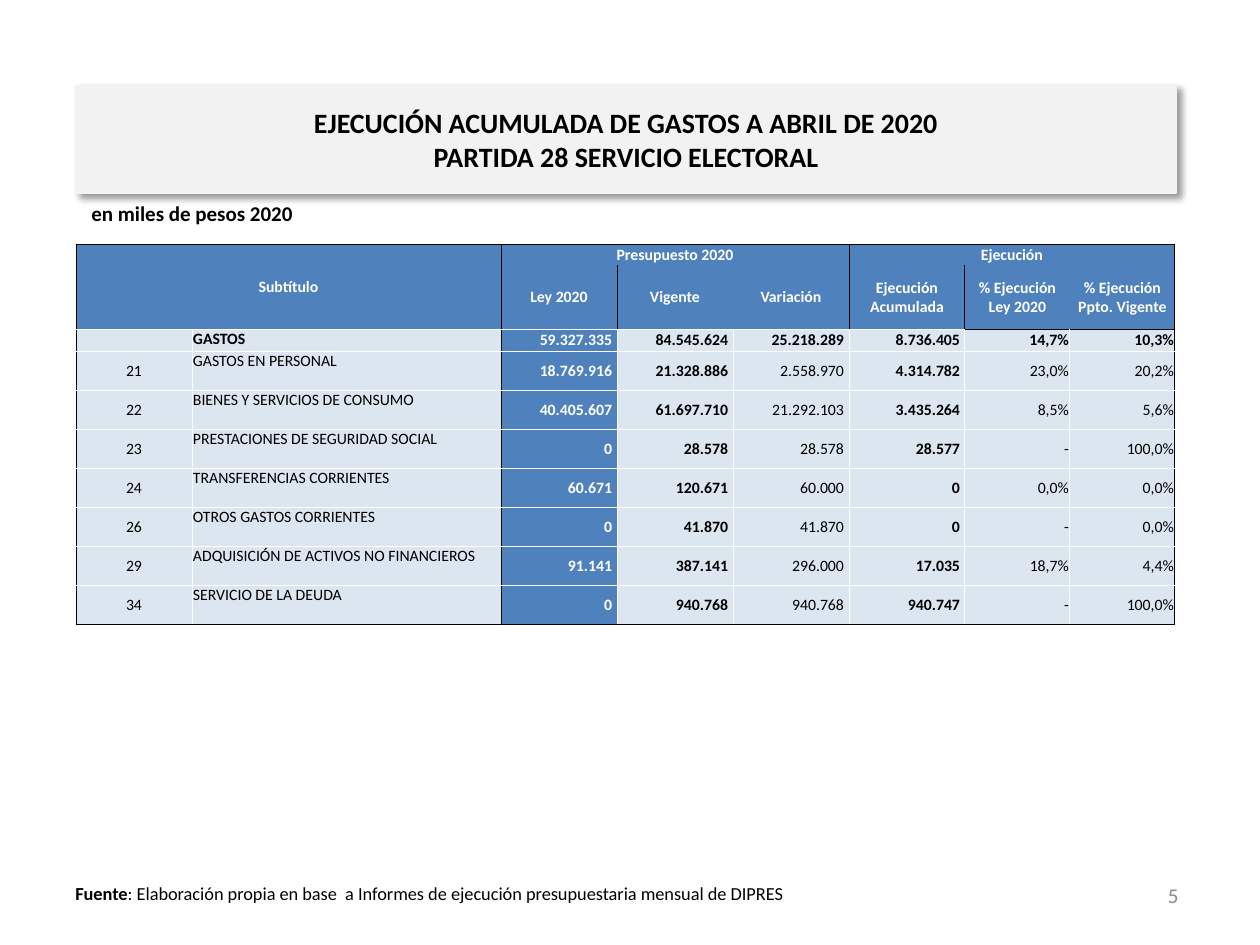
from dataclasses import dataclass

from lxml import etree
from pptx import Presentation
from pptx.dml.color import RGBColor
from pptx.enum.shapes import MSO_SHAPE
from pptx.enum.text import MSO_ANCHOR, PP_ALIGN
from pptx.oxml.ns import qn
from pptx.util import Pt

PX = 914400 / 126  # EMU per px
FONT = "Calibri"
BLACK = RGBColor(0x00, 0x00, 0x00)
WHITE = RGBColor(0xFF, 0xFF, 0xFF)
GRAY = RGBColor(0x8C, 0x8C, 0x8C)
LIGHT_GRAY = RGBColor(0xF2, 0xF2, 0xF2)
BLUE = RGBColor(0x4F, 0x81, 0xBD)
PALE_BLUE = RGBColor(0xDC, 0xE6, 0xF1)
NO_TABLE_STYLE = "{2D5ABB26-0587-4C30-8999-92F81FD0307C}"

COLUMN_WIDTHS = [116, 309, 116, 116, 116, 116, 105, 105]
ROW_HEIGHTS = [21, 64, 22] + [39] * 7
TOTAL_ROW = 2
LAST_ROW, LAST_COLUMN = len(ROW_HEIGHTS) - 1, len(COLUMN_WIDTHS) - 1
CODE, NAME, LAW, CURRENT, EXECUTED, LAW_SHARE = 0, 1, 2, 3, 5, 6

HEADERS = [
    ["Subtítulo", "", "Presupuesto 2020", "", "", "Ejecución", "", ""],
    ["", "", "Ley 2020", "Vigente", "Variación", "Ejecución Acumulada",
     "% Ejecución Ley 2020", "% Ejecución Ppto. Vigente"],
]
MERGES = [((0, 0), (1, 1)), ((0, 2), (0, 4)), ((0, 5), (0, 7))]


@dataclass
class Box:
    left: int
    top: int
    width: int
    height: int

    def emu(self) -> list[int]:
        return [round(n * PX) for n in (self.left, self.top, self.width, self.height)]


@dataclass
class Expense:
    code: str
    name: str
    law: str
    current: str
    variation: str
    executed: str
    law_share: str
    current_share: str

    def texts(self) -> list[str]:
        return [self.code, self.name, self.law, self.current, self.variation,
                self.executed, self.law_share, self.current_share]


EXPENSES = [
    Expense("", "GASTOS", "59.327.335", "84.545.624", "25.218.289", "8.736.405", "14,7%", "10,3%"),
    Expense("21", "GASTOS EN PERSONAL", "18.769.916", "21.328.886", "2.558.970", "4.314.782", "23,0%", "20,2%"),
    Expense("22", "BIENES Y SERVICIOS DE CONSUMO", "40.405.607", "61.697.710", "21.292.103", "3.435.264", "8,5%", "5,6%"),
    Expense("23", "PRESTACIONES DE SEGURIDAD SOCIAL", "0", "28.578", "28.578", "28.577", "-", "100,0%"),
    Expense("24", "TRANSFERENCIAS CORRIENTES", "60.671", "120.671", "60.000", "0", "0,0%", "0,0%"),
    Expense("26", "OTROS GASTOS CORRIENTES", "0", "41.870", "41.870", "0", "-", "0,0%"),
    Expense("29", "ADQUISICIÓN DE ACTIVOS NO FINANCIEROS", "91.141", "387.141", "296.000", "17.035", "18,7%", "4,4%"),
    Expense("34", "SERVICIO DE LA DEUDA", "0", "940.768", "940.768", "940.747", "-", "100,0%"),
]


def format_run(run, size: float, color: RGBColor, bold: bool) -> None:
    run.font.name, run.font.size, run.font.bold = FONT, Pt(size), bold
    run.font.color.rgb = color


def add_text(slide, box: Box, parts: list[tuple[str, bool]], size: float,
             color: RGBColor = BLACK, align=PP_ALIGN.LEFT, anchor=MSO_ANCHOR.TOP) -> None:
    text_frame = slide.shapes.add_textbox(*box.emu()).text_frame
    text_frame.word_wrap = True
    text_frame.vertical_anchor = anchor
    paragraph = text_frame.paragraphs[0]
    paragraph.alignment = align
    for text, bold in parts:
        run = paragraph.add_run()
        run.text = text
        format_run(run, size, color, bold)


def add_title(slide, box: Box, lines: list[str]) -> None:
    shape = slide.shapes.add_shape(MSO_SHAPE.RECTANGLE, *box.emu())
    shape.fill.solid()
    shape.fill.fore_color.rgb = LIGHT_GRAY
    shape.line.color.rgb = LIGHT_GRAY
    shape.line.width = Pt(0.75)
    # Soft shadow to the lower right
    shape.shadow.inherit = False
    effects = shape._element.spPr.find(qn("a:effectLst"))
    shadow = etree.SubElement(effects, qn("a:outerShdw"), blurRad=str(Pt(4)), dist=str(Pt(3)),
                              dir="2700000", algn="tl", rotWithShape="0")
    color = etree.SubElement(shadow, qn("a:srgbClr"), val=str(BLACK))
    etree.SubElement(color, qn("a:alpha"), val="40000")
    shape.text_frame.text = "\n".join(lines)
    shape.text_frame.vertical_anchor = MSO_ANCHOR.MIDDLE
    for paragraph in shape.text_frame.paragraphs:
        paragraph.alignment = PP_ALIGN.CENTER
        format_run(paragraph.runs[0], 16, BLACK, True)


def cell_borders(row: int, column: int, last_row: int, last_column: int) -> dict[str, RGBColor]:
    """Black outline and dividers, white grid in the body, open headers."""
    header = row < TOTAL_ROW
    shares = column >= LAW_SHARE
    black = {
        "a:lnL": column in (CODE, LAW) or (header and column == EXECUTED),
        "a:lnR": last_column in (NAME, LAST_COLUMN) or (header and last_column == EXECUTED - 1),
        "a:lnT": row == 0 or (row == TOTAL_ROW and shares),
        "a:lnB": last_row == LAST_ROW or (last_row == TOTAL_ROW - 1 and shares),
    }
    white = {"a:lnB"} if last_row == TOTAL_ROW - 1 else set() if header else set(black)
    return {side: BLACK if is_black else WHITE
            for side, is_black in black.items() if is_black or side in white}


def draw_borders(cell, borders: dict[str, RGBColor]) -> None:
    properties = cell._tc.get_or_add_tcPr()
    for index, (side, color) in enumerate(borders.items()):
        line = etree.Element(qn(side), w=str(Pt(0.5)))
        fill = etree.SubElement(line, qn("a:solidFill"))
        etree.SubElement(fill, qn("a:srgbClr"), val=str(color))
        properties.insert(index, line)


def fill_cell(cell, text: str, row: int, column: int) -> None:
    header = row < TOTAL_ROW
    on_blue = header or column == LAW
    cell.fill.solid()
    cell.fill.fore_color.rgb = BLUE if on_blue else PALE_BLUE
    side_margin = 4 if header else 1
    cell.margin_left = cell.margin_right = round(side_margin * PX)
    if not header and LAW <= column <= EXECUTED:
        cell.margin_right = round(5 * PX)
    cell.margin_top, cell.margin_bottom = round(PX), 0
    cell.vertical_anchor = MSO_ANCHOR.MIDDLE
    if row == 0 and column >= LAW:
        cell.vertical_anchor = MSO_ANCHOR.BOTTOM
    elif not header and column == NAME:
        cell.vertical_anchor = MSO_ANCHOR.TOP

    cell.text_frame.text = text
    paragraph = cell.text_frame.paragraphs[0]
    if header or column == CODE:
        paragraph.alignment = PP_ALIGN.CENTER
    else:
        paragraph.alignment = PP_ALIGN.JUSTIFY if column == NAME else PP_ALIGN.RIGHT
    bold = row <= TOTAL_ROW or column in (LAW, CURRENT, EXECUTED)
    for run in paragraph.runs:
        format_run(run, 9, WHITE if on_blue else BLACK, bold)
    if not text:
        etree.SubElement(paragraph._p, qn("a:endParaRPr"), sz="900")


def add_budget_table(slide, left: int, top: int) -> None:
    box = Box(left, top, sum(COLUMN_WIDTHS), sum(ROW_HEIGHTS))
    frame = slide.shapes.add_table(len(ROW_HEIGHTS), len(COLUMN_WIDTHS), *box.emu())
    table = frame.table
    table._tbl.tblPr.find(qn("a:tableStyleId")).text = NO_TABLE_STYLE
    table.horz_banding = False
    for column, width in zip(table.columns, COLUMN_WIDTHS):
        column.width = round(width * PX)
    for row, height in zip(table.rows, ROW_HEIGHTS):
        row.height = round(height * PX)
    for first, last in MERGES:
        table.cell(*first).merge(table.cell(*last))
    ends = dict(MERGES)
    for row, texts in enumerate(HEADERS + [expense.texts() for expense in EXPENSES]):
        for column, text in enumerate(texts):
            cell = table.cell(row, column)
            fill_cell(cell, text, row, column)
            draw_borders(cell, cell_borders(row, column, *ends.get((row, column), (row, column))))


def main() -> None:
    presentation = Presentation()
    presentation.slide_width, presentation.slide_height = round(1260 * PX), round(945 * PX)
    slide = presentation.slides.add_slide(presentation.slide_layouts[6])

    # Source note, title, page number and unit
    add_text(slide, Box(63, 876, 745, 35), [
        ("Fuente", True),
        (": Elaboración propia en base  a Informes de ejecución presupuestaria mensual de DIPRES", False),
    ], 10.5)
    add_title(slide, Box(76, 86, 1100, 107),
              ["EJECUCIÓN ACUMULADA DE GASTOS A ABRIL DE 2020", "PARTIDA 28 SERVICIO ELECTORAL"])
    add_text(slide, Box(897, 870, 294, 50), [("5", False)], 12, GRAY,
             PP_ALIGN.RIGHT, MSO_ANCHOR.MIDDLE)
    add_text(slide, Box(79, 194, 1086, 63), [("en miles de pesos 2020", True)], 12)

    # Budget table
    add_budget_table(slide, 76, 244)
    presentation.save("out.pptx")


if __name__ == "__main__":
    main()
